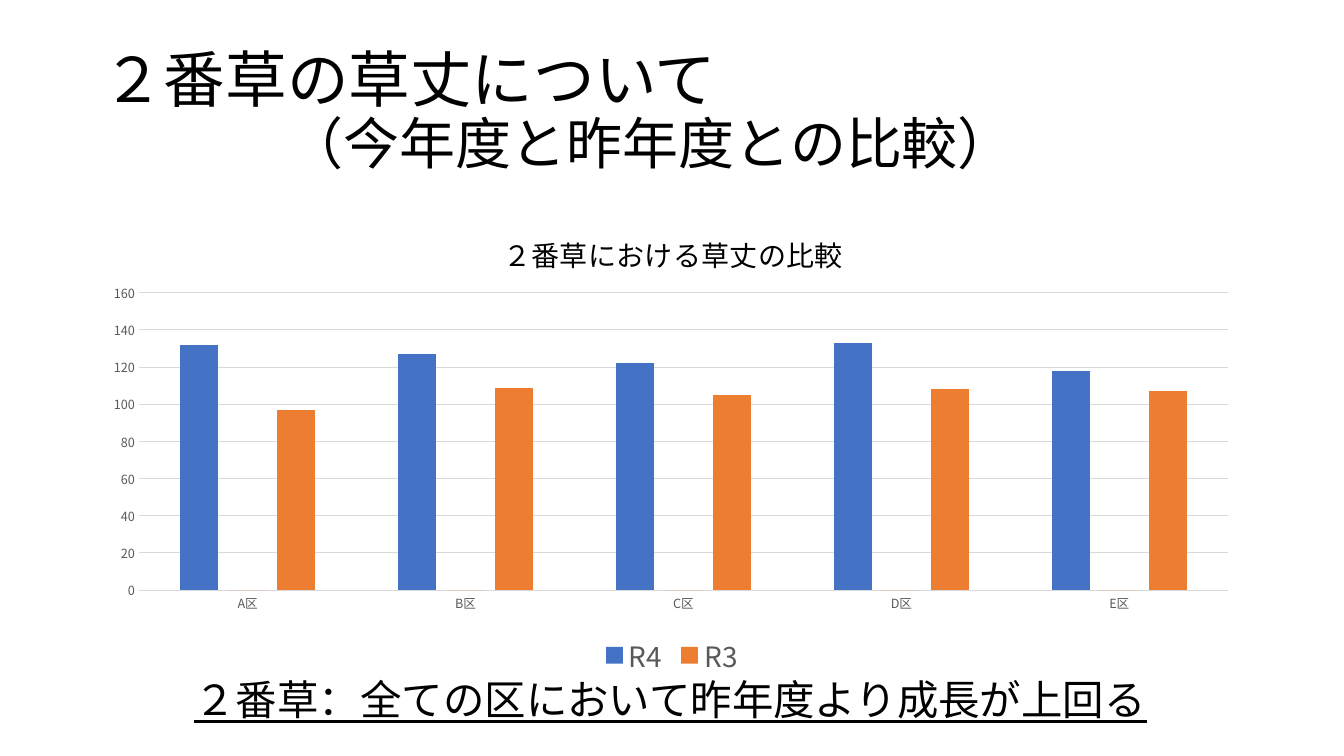
"""Build a slide comparing second-crop grass height this year and last year."""
from lxml import etree
from pptx import Presentation
from pptx import util as u
from pptx.chart.data import CategoryChartData
from pptx.dml.color import RGBColor
from pptx.enum import chart as ch, text
from pptx.oxml.ns import qn

JP = "Noto Sans CJK JP"
BLACK, GREY, GRID = "000000", "595959", "D9D9D9"
HEADING = [("２番草の草丈について", 44, 0), ("（今年度と昨年度との比較）", 40, 4.66)]
HEADING_BOX = (2.33, 1.01, 29.21, 3.68)
CONCLUSION = "２番草：全ての区において昨年度より成長が上回る"
CONCLUSION_BOX = (4.65, 17.1, 29.21, 1.27)
CHART_BOX = (2.33, 5.08, 29.21, 12.09)
CHART_TITLE = "２番草における草丈の比較"
DISTRICTS = ["A区", "B区", "C区", "D区", "E区"]
HEIGHTS = [
    ("R4", (132, 127, 122, 133, 118), "4472C4"),
    ("Series 2", (0, 0, 0, 0, 0), "ED7D31"),
    ("R3", (97, 109, 105, 108, 107), "ED7D31"),
]
HIDDEN_IN_LEGEND = 1
TITLE_PLACE = {"x": 0.35, "y": 0.05}
PLOT_PLACE = {"x": 0.04, "y": 0.19, "w": 0.94, "h": 0.62}


def colour(hex_string):
    return RGBColor.from_string(hex_string)


def style(font, size, hex_string, name=JP):
    font.size, font.name = u.Pt(size), name
    font.color.rgb = colour(hex_string)


def style_run(run, size, name=JP):
    style(run.font, size, BLACK, name)
    etree.SubElement(run.font._element, qn("a:ea")).set("typeface", JP)


def add_box(slide, box):
    frame = slide.shapes.add_textbox(*map(u.Cm, box)).text_frame
    frame.word_wrap = True
    return frame


def place(element, position, inner=False):
    for old in element.findall(qn("c:layout")):
        element.remove(old)
    layout = etree.Element(qn("c:layout"))
    manual = etree.SubElement(layout, qn("c:manualLayout"))
    settings = {"layoutTarget": "inner"} if inner else {}
    settings |= {"xMode": "edge", "yMode": "edge"} | position
    for tag, value in settings.items():
        etree.SubElement(manual, qn("c:" + tag)).set("val", str(value))
    text_part = element.find(qn("c:tx"))
    element.insert(0 if text_part is None else 1, layout)


def add_heading(slide):
    frame = add_box(slide, HEADING_BOX)
    frame.vertical_anchor = text.MSO_ANCHOR.MIDDLE
    for i, (line, size, indent) in enumerate(HEADING):
        paragraph = frame.add_paragraph() if i else frame.paragraphs[0]
        paragraph.text, paragraph.line_spacing = line, 0.9
        paragraph._p.get_or_add_pPr().set("marL", str(u.Cm(indent)))
        style_run(paragraph.runs[0], size, "Arial")


def add_conclusion(slide):
    paragraph = add_box(slide, CONCLUSION_BOX).paragraphs[0]
    paragraph.text, paragraph.line_spacing = CONCLUSION, 0.8
    paragraph.space_before = u.Pt(10)
    style_run(paragraph.runs[0], 29.6)
    paragraph.runs[0].font.underline = True


def add_height_chart(slide):
    data = CategoryChartData()
    data.categories = DISTRICTS
    for name, values, _ in HEIGHTS:
        data.add_series(name, values)
    chart = slide.shapes.add_chart(
        ch.XL_CHART_TYPE.COLUMN_CLUSTERED, *map(u.Cm, CHART_BOX), data).chart
    style(chart.font, 10, BLACK)

    chart.chart_title.text_frame.text = CHART_TITLE
    title_run = chart.chart_title.text_frame.paragraphs[0].runs[0]
    style_run(title_run, 20)
    title_run.font.bold = False
    place(chart.chart_title._element, TITLE_PLACE)

    plot = chart.plots[0]
    plot.gap_width, plot.overlap, plot.vary_by_categories = 219, -27, False
    for series, (_, _, fill) in zip(plot.series, HEIGHTS):
        series.format.fill.solid()
        series.format.fill.fore_color.rgb = colour(fill)
        series.invert_if_negative = False
    place(chart._chartSpace.chart.plotArea, PLOT_PLACE, inner=True)

    districts, heights = chart.category_axis, chart.value_axis
    for axis in (districts, heights):
        axis.major_tick_mark = axis.minor_tick_mark = ch.XL_TICK_MARK.NONE
        style(axis.tick_labels.font, 9, GREY)
    heights.minimum_scale, heights.maximum_scale, heights.major_unit = 0, 160, 20
    heights.format.line.fill.background()
    for line in (districts.format.line, heights.major_gridlines.format.line):
        line.color.rgb, line.width = colour(GRID), u.Pt(0.75)

    chart.has_legend = True
    legend = chart.legend
    legend.position, legend.include_in_layout = ch.XL_LEGEND_POSITION.BOTTOM, False
    style(legend.font, 20, GREY)
    entry = etree.Element(qn("c:legendEntry"))
    etree.SubElement(entry, qn("c:idx")).set("val", str(HIDDEN_IN_LEGEND))
    etree.SubElement(entry, qn("c:delete")).set("val", "1")
    legend._element.find(qn("c:legendPos")).addnext(entry)


def main():
    deck = Presentation()
    deck.slide_width, deck.slide_height = u.Cm(33.87), u.Cm(19.05)
    slide = deck.slides.add_slide(deck.slide_layouts[6])
    add_height_chart(slide)
    add_heading(slide)
    add_conclusion(slide)
    deck.save("out.pptx")


if __name__ == "__main__":
    main()
